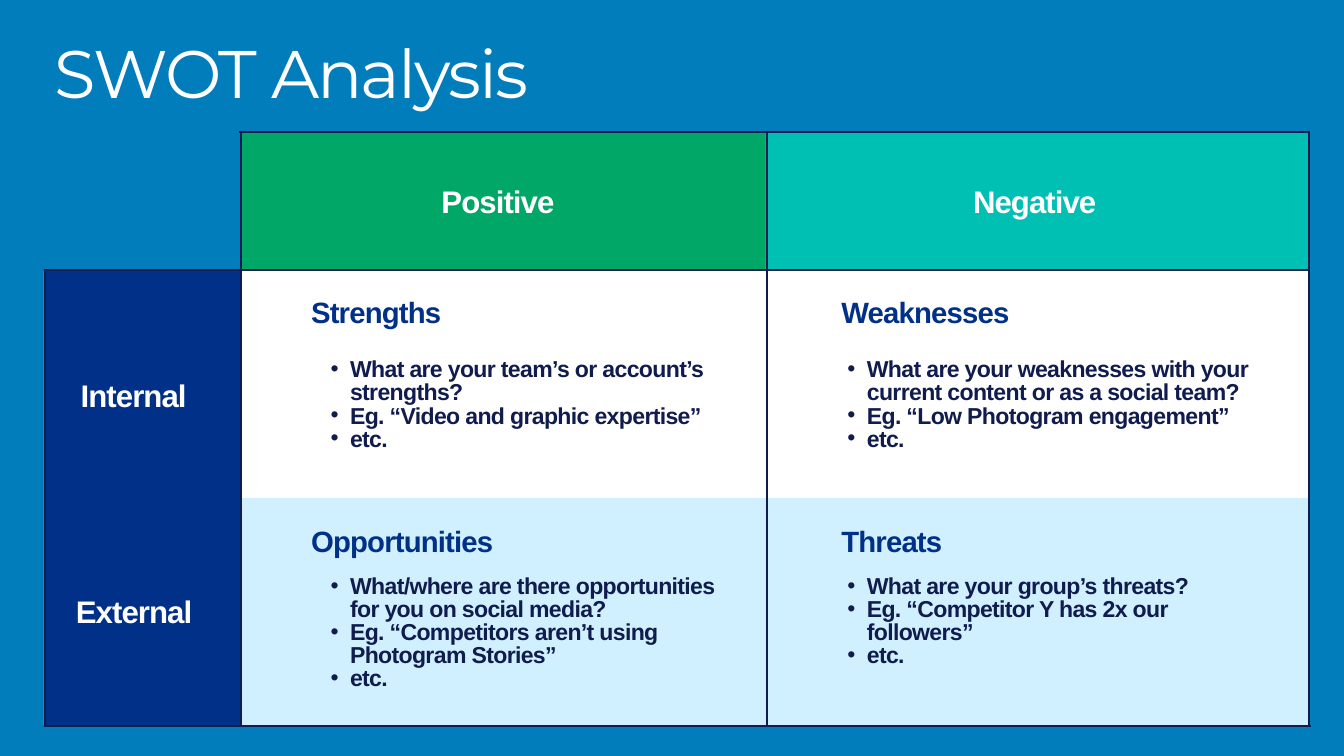
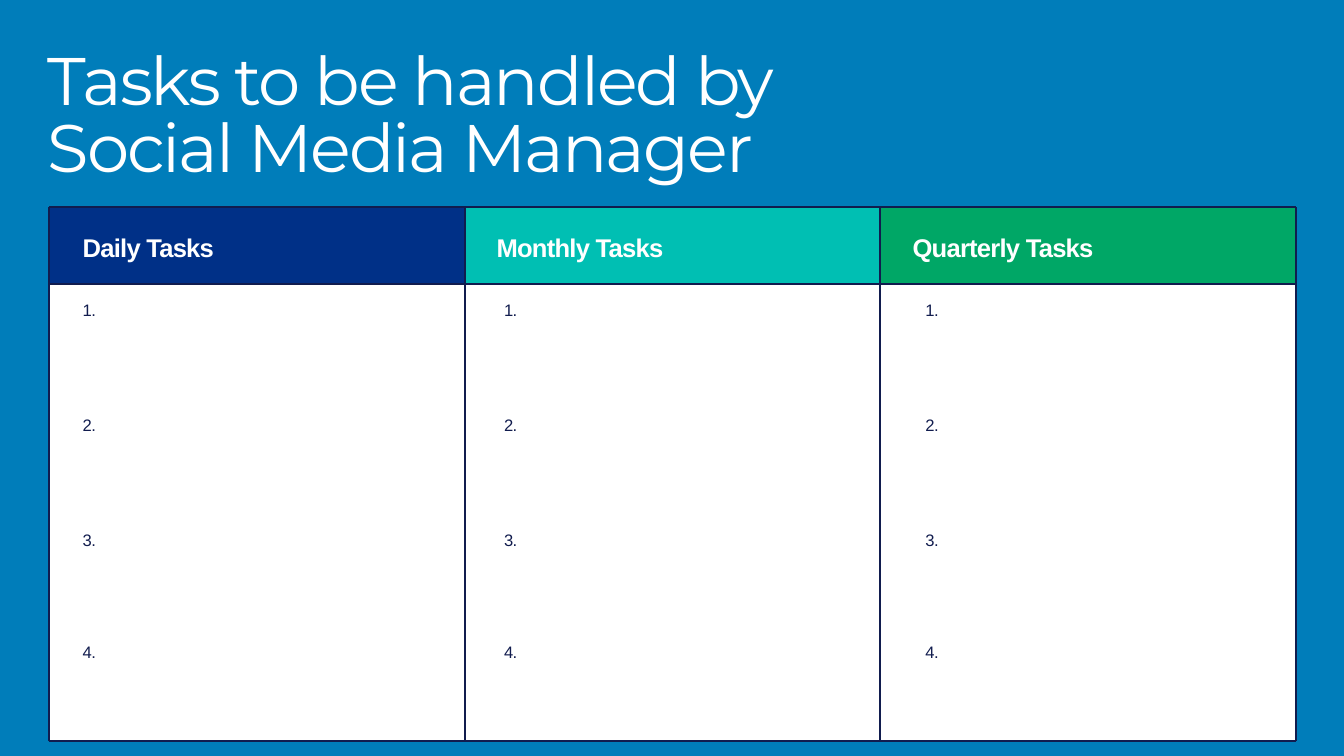
from lxml.etree import SubElement
from pptx import Presentation
from pptx.dml.color import RGBColor
from pptx.enum.shapes import MSO_CONNECTOR as CONNECTOR, MSO_SHAPE as SHAPE
from pptx.enum.text import MSO_ANCHOR as ANCHOR, MSO_AUTO_SIZE as AUTO, PP_ALIGN as ALIGN
from pptx.oxml.ns import qn
from pptx.util import Inches, Pt

COLORS = dict(sky="007DBA", navy="003087", ink="111C4E", green="00A766",
              teal="00BFB3", pale="D0F0FF", white="FFFFFF")

# spc is letter spacing and line is line spacing, both in points
STYLES = {
    "title": dict(name="Montserrat", size=72, bold=False, color="white", spc=-2.1, line=72),
    "axis": dict(name="Arial", size=33.4, bold=True, color="white", spc=-1, line=33.4),
    "quadrant": dict(name="Arial", size=31.4, bold=True, color="navy", spc=-0.9, line=31.4),
    "bullet": dict(name="Arial", size=24.7, bold=True, color="ink", spc=-0.7, line=24.7),
    "column": dict(name="Arial", size=27.4, bold=True, color="white", spc=-0.8, line=27.4),
    "number": dict(name="Arial", size=17.8, bold=False, color="ink", spc=-0.5, line=21.8),
}

# Slide 1: left, top, width, height
SWOT_TITLE = ("SWOT Analysis", (0.81, 0.67, 13.89, 1.05))
SWOT_PANELS = [
    ("white", (0.65, 4.03, 18.84, 6.77)),
    ("pale", (2.26, 7.41, 17.23, 3.39)),
    ("navy", (0.65, 4.02, 2.94, 6.79)),
    ("green", (3.6, 1.98, 7.8, 2.05)),
    ("teal", (11.39, 1.98, 8.1, 2.05)),
]
SWOT_LINES = [
    (11.41, 10.8, 11.41, 1.98), (19.48, 10.8, 19.48, 1.98), (3.58, 10.8, 3.58, 1.98),
    (19.49, 1.97, 3.56, 1.97), (19.51, 10.8, 0.65, 10.8), (19.49, 4.02, 0.65, 4.02),
    (0.67, 10.8, 0.67, 4.02),
]
AXIS_LABELS = [
    ("Positive", 6.57, 2.8, 1.86), ("Negative", 14.48, 2.8, 2.14),
    ("Internal", 1.2, 5.7, 1.86), ("External", 1.13, 8.91, 2.26),
]
# Column, row, heading, bullet width, bullets
QUADRANTS = [
    (0, 0, "Strengths", 6.24, ["What are your team’s or account’s strengths?",
                               "Eg. “Video and graphic expertise”", "etc."]),
    (1, 0, "Weaknesses", 6.55,
     ["What are your weaknesses with your current content or as a social team?",
      "Eg. “Low Photogram engagement”", "etc."]),
    (0, 1, "Opportunities", 6.47,
     ["What/where are there opportunities for you on social media?",
      "Eg. “Competitors aren’t using Photogram Stories”", "etc."]),
    (1, 1, "Threats", 6.24, ["What are your group’s threats?",
                             "Eg. “Competitor Y has 2x our followers”", "etc."]),
]
HEADING_X, HEADING_Y = (4.63, 12.52), (4.47, 7.88)
BULLETS_X, BULLETS_Y = (4.63, 12.32), (5.35, 8.57)

# Slide 2
TASKS_TITLE = ("Tasks to be handled by Social Media Manager", (0.71, 0.77, 13.57, 2.02))
TASK_COLUMNS = [("Daily Tasks", "navy", 1.23), ("Monthly Tasks", "teal", 7.39),
                ("Quarterly Tasks", "green", 13.58)]
COLUMN_EDGES = (0.73, 6.92, 13.09, 19.28)
ROW_EDGES = (3.08, 4.22, 11.03)
NUMBER_Y = (4.45, 6.17, 7.88, 9.55)
NUMBER_X, NUMBER_STEP = 1.23, 6.27


def rgb(color):
    return RGBColor.from_string(COLORS[color])


def write(sp, paragraphs, style, bullets=False):
    fmt = STYLES[style]
    tf = sp.text_frame
    frame = dict(margin_left=0, margin_top=0, margin_right=0, margin_bottom=0, word_wrap=True,
                 vertical_anchor=ANCHOR.TOP, auto_size=AUTO.SHAPE_TO_FIT_TEXT)
    for key, value in frame.items():
        setattr(tf, key, value)
    for i, text in enumerate(paragraphs):
        p = tf.add_paragraph() if i else tf.paragraphs[0]
        p.alignment = ALIGN.LEFT
        p.line_spacing = Pt(fmt["line"])
        r = p.add_run()
        r.text = text
        for key, value in dict(name=fmt["name"], size=Pt(fmt["size"]), bold=fmt["bold"]).items():
            setattr(r.font, key, value)
        r.font.color.rgb = rgb(fmt["color"])
        r.font._element.set("spc", str(round(fmt["spc"] * 100)))
        if bullets:
            p.level = 1
            pPr = p._p.get_or_add_pPr()
            pPr.set("marL", str(Inches(0.58)))
            pPr.set("indent", str(Inches(-0.29)))
            SubElement(pPr, qn("a:buFont")).set("typeface", "Arial")
            SubElement(pPr, qn("a:buChar")).set("char", "•")


def add_text(slide, paragraphs, box, style, bullets=False):
    write(slide.shapes.add_textbox(*map(Inches, box)), paragraphs, style, bullets)


def add_panel(slide, color, box):
    sp = slide.shapes.add_shape(SHAPE.RECTANGLE, *map(Inches, box))
    sp.shadow.inherit = False
    sp.fill.solid()
    sp.fill.fore_color.rgb = rgb(color)
    sp.line.fill.background()


def add_line(slide, ends, width):
    line = slide.shapes.add_connector(CONNECTOR.STRAIGHT, *map(Inches, ends))
    line.line.color.rgb = rgb("ink")
    line.line.width = Pt(width)
    SubElement(line._element.spPr, qn("a:effectLst"))


def add_slide(prs, title, box):
    slide = prs.slides.add_slide(prs.slide_layouts[5])
    sp = slide.shapes.title
    sp.left, sp.top, sp.width, sp.height = map(Inches, box)
    write(sp, [title], "title")
    return slide


def build_swot(prs):
    slide = add_slide(prs, *SWOT_TITLE)
    for color, box in SWOT_PANELS:
        add_panel(slide, color, box)
    for ends in SWOT_LINES:
        add_line(slide, ends, 2.25)
    for text, x, y, width in AXIS_LABELS:
        add_text(slide, [text], (x, y, width, 0.46), "axis")
    for col, row, heading, width, bullets in QUADRANTS:
        add_text(slide, [heading], (HEADING_X[col], HEADING_Y[row], 3.04, 0.45), "quadrant")
        add_text(slide, bullets, (BULLETS_X[col], BULLETS_Y[row], width, 1.4), "bullet", True)


def build_tasks(prs):
    slide = add_slide(prs, *TASKS_TITLE)
    left, right = COLUMN_EDGES[0], COLUMN_EDGES[-1]
    top, middle, bottom = ROW_EDGES
    add_panel(slide, "white", (left, middle, right - left, bottom - middle))
    for (_, color, _), x, x_next in zip(TASK_COLUMNS, COLUMN_EDGES, COLUMN_EDGES[1:]):
        add_panel(slide, color, (x, top, x_next - x, middle - top))
    for x in COLUMN_EDGES:
        add_line(slide, (x, bottom, x, top), 2.02)
    for y in ROW_EDGES:
        add_line(slide, (right, y, left, y), 2.02)
    for i, (text, _, x) in enumerate(TASK_COLUMNS):
        add_text(slide, [text], (x, 3.53, 3.23, 0.38), "column")
        for n, y in enumerate(NUMBER_Y, 1):
            add_text(slide, [f"{n}."], (NUMBER_X + i * NUMBER_STEP, y, 4.81, 0.3), "number")


def main():
    prs = Presentation()
    prs.slide_width, prs.slide_height = Inches(20), Inches(11.25)
    background = prs.slide_master.background.fill
    background.solid()
    background.fore_color.rgb = rgb("sky")
    build_swot(prs)
    build_tasks(prs)
    prs.save("out.pptx")


if __name__ == "__main__":
    main()
